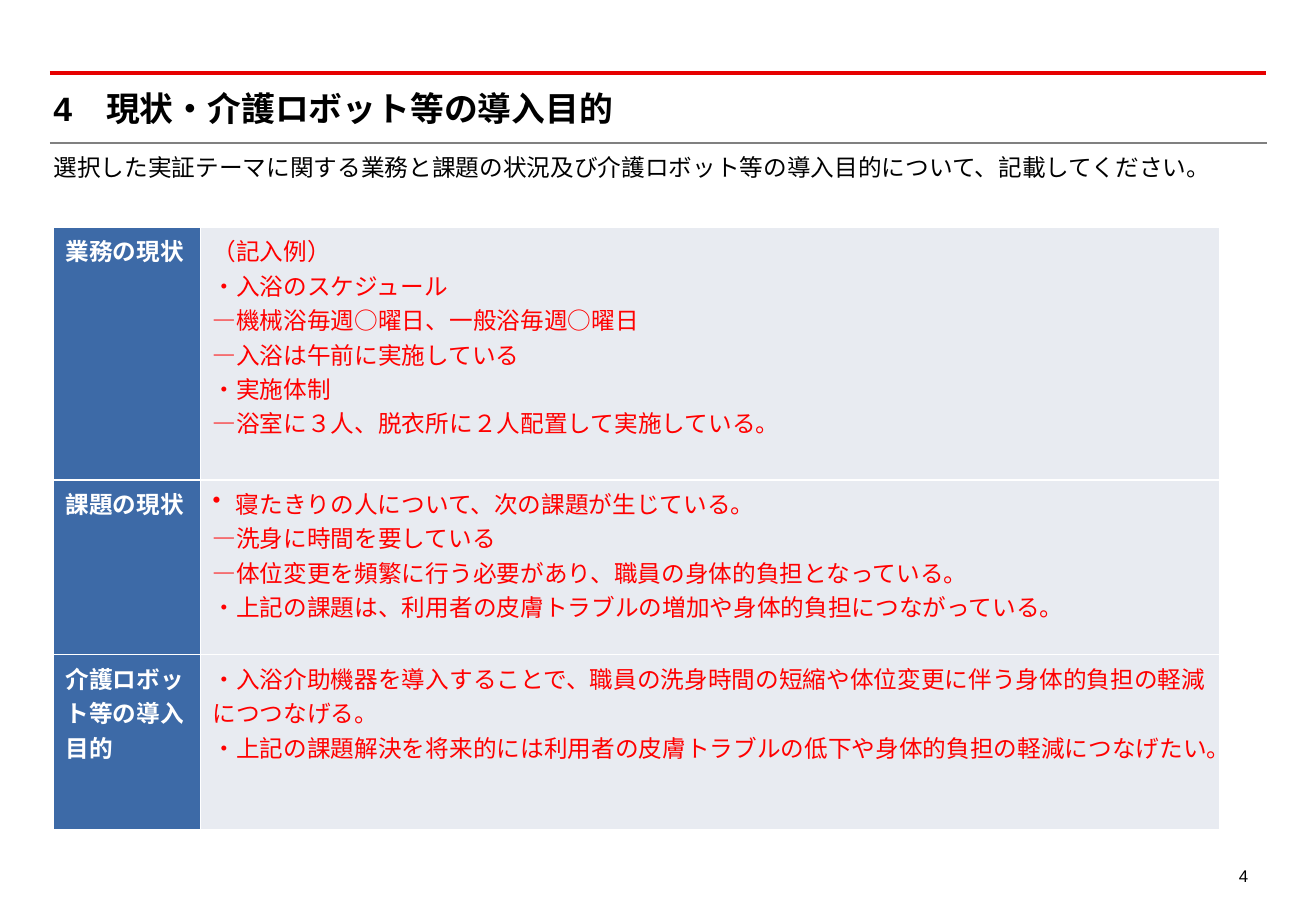
import pptx
import pptx.dml.color
import pptx.enum.shapes
import pptx.enum.text
import pptx.oxml
import pptx.oxml.ns
import pptx.util
from lxml import etree

PX = 9144  # 100 px to the inch
THEME = {
    "latin": "Arial", "japanese": "Noto Sans CJK JP",
    "title": 20, "body": 14, "number": 10,
    "black": "000000", "white": "FFFFFF", "example": "FF0000",
    "heading_fill": "3D6AA7", "content_fill": "E8EBF1",
    "top_rule": "E60000", "bottom_rule": "808080",
}
ALIGN = pptx.enum.text.PP_ALIGN
qn = pptx.oxml.ns.qn


def color(name):
    return pptx.dml.color.RGBColor.from_string(THEME[name])


def style(paragraph, size, ink, font="latin", bold=False, align=ALIGN.LEFT):
    paragraph.alignment = align
    paragraph.font.size = pptx.util.Pt(THEME[size])
    paragraph.font.name = THEME[font]
    paragraph.font.bold = bold
    paragraph.font.color.rgb = color(ink)
    properties = paragraph.font._element
    east_asian = etree.SubElement(properties, qn("a:ea"), typeface=THEME["japanese"])
    properties.find(qn("a:latin")).addnext(east_asian)


presentation = pptx.Presentation()
presentation.slide_width = 1083 * PX
presentation.slide_height = 750 * PX
slide = presentation.slides.add_slide(presentation.slide_layouts[5])

# Rules above and below the title
for y, right, ink, width in [(60, 1042, "top_rule", 2), (118, 1043, "bottom_rule", 1.25)]:
    rule = slide.shapes.add_connector(
        pptx.enum.shapes.MSO_CONNECTOR.STRAIGHT, 41 * PX, y * PX, right * PX, y * PX)
    rule.line.color.rgb = color(ink)
    rule.line.width = pptx.util.Pt(width)
    etree.SubElement(rule._element.spPr, qn("a:effectLst"))

# Title and instruction
title = slide.shapes.title
title.left, title.top, title.width, title.height = 44 * PX, 72 * PX, 991 * PX, 34 * PX
instruction = slide.shapes.add_textbox(44 * PX, 126 * PX, 991 * PX, 25 * PX)
for shape, text, size, bold, anchor in [
    (title, "4　現状・介護ロボット等の導入目的", "title", True, pptx.enum.text.MSO_ANCHOR.MIDDLE),
    (instruction, "選択した実証テーマに関する業務と課題の状況及び介護ロボット等の導入目的について、記載してください。",
     "body", False, pptx.enum.text.MSO_ANCHOR.TOP),
]:
    frame = shape.text_frame
    frame.margin_left = frame.margin_top = frame.margin_right = frame.margin_bottom = 0
    frame.word_wrap = True
    frame.auto_size = pptx.enum.text.MSO_AUTO_SIZE.NONE
    frame.vertical_anchor = anchor
    frame.text = text
    style(frame.paragraphs[0], size, "black", bold=bold)

# Table of current work, issues and purpose
ROWS = [
    (208, "業務の現状", [
        "（記入例）",
        "・入浴のスケジュール",
        "—機械浴毎週○曜日、一般浴毎週○曜日",
        "—入浴は午前に実施している",
        "・実施体制",
        "—浴室に３人、脱衣所に２人配置して実施している。",
    ]),
    (144, "課題の現状", [
        "寝たきりの人について、次の課題が生じている。",
        "—洗身に時間を要している",
        "—体位変更を頻繁に行う必要があり、職員の身体的負担となっている。",
        "・上記の課題は、利用者の皮膚トラブルの増加や身体的負担につながっている。",
    ]),
    (144, "介護ロボット等の導入目的", [
        "・入浴介助機器を導入することで、職員の洗身時間の短縮や体位変更に伴う身体的負担の軽減につつなげる。",
        "・上記の課題解決を将来的には利用者の皮膚トラブルの低下や身体的負担の軽減につなげたい。",
    ]),
]
table = slide.shapes.add_table(3, 2, 44 * PX, 187 * PX, 960 * PX, 496 * PX).table
for column, width in zip(table.columns, (121, 839)):
    column.width = width * PX
for row, (height, heading, lines) in zip(table.rows, ROWS):
    row.height = height * PX
    for cell, text, fill, ink, bold in [
        (row.cells[0], heading, "heading_fill", "white", True),
        (row.cells[1], "\n".join(lines), "content_fill", "example", False),
    ]:
        cell.text = text
        for paragraph in cell.text_frame.paragraphs:
            style(paragraph, "body", ink, "japanese", bold)
        # Borders come before the fill in the cell properties
        properties = cell._tc.get_or_add_tcPr()
        for side in ("lnL", "lnR", "lnT", "lnB"):
            border = etree.SubElement(properties, qn("a:" + side), w="12700")
            border_fill = etree.SubElement(border, qn("a:solidFill"))
            etree.SubElement(border_fill, qn("a:srgbClr"), val=THEME["white"])
        cell.fill.solid()
        cell.fill.fore_color.rgb = color(fill)

# Bullet on the first issue
bullet_properties = table.cell(1, 1).text_frame.paragraphs[0]._p.get_or_add_pPr()
bullet_properties.set("marL", str(19 * PX))
bullet_properties.set("indent", str(-19 * PX))
bullet = etree.Element(qn("a:buChar"), char="•")
bullet_properties.find(qn("a:defRPr")).addprevious(bullet)

# Slide number
number = slide.shapes.add_textbox(993 * PX, 708 * PX, 44 * PX, 28 * PX)
number.text_frame.text = "4"
style(number.text_frame.paragraphs[0], "number", "black", align=ALIGN.RIGHT)

presentation.save("out.pptx")
